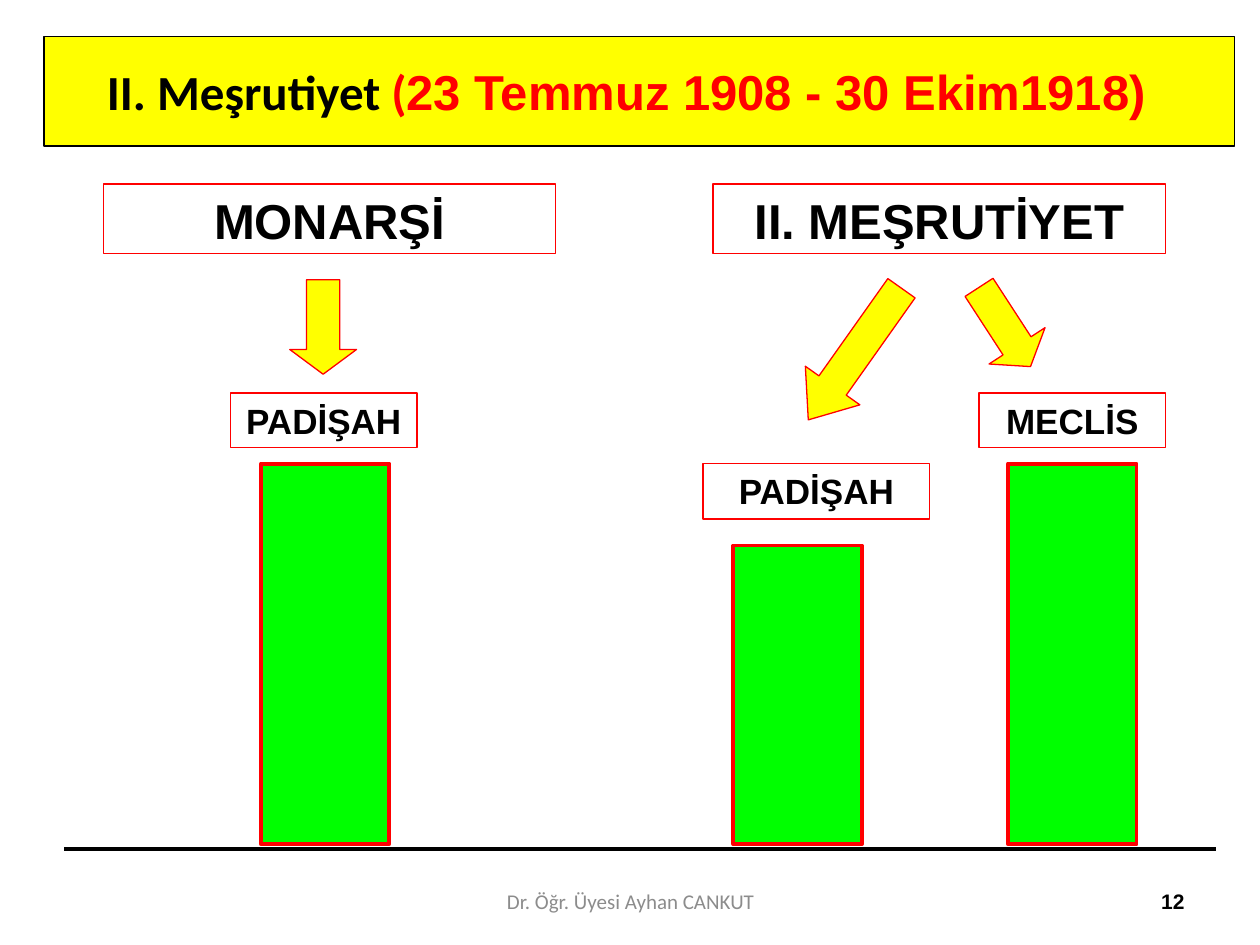
from dataclasses import dataclass

from lxml import etree
from pptx import Presentation
from pptx import util as u
from pptx.dml.color import RGBColor
from pptx.enum import shapes, text
from pptx.oxml.ns import qn

COLUMNS, ROWS = 100, 75
RED, YELLOW, GREEN, BLACK, GREY = "FF0000", "FFFF00", "00FF00", "000000", "8C8C8C"
BASE_ROW, BAR_WIDTH, ARROW_WIDTH = 67, 10.2, 5.3

deck = Presentation()
deck.slide_width, deck.slide_height = u.Inches(10), u.Inches(7.5)
page = deck.slides.add_slide(deck.slide_layouts[5])


@dataclass
class Area:
    left: float
    top: float
    width: float
    height: float

    def lengths(self) -> tuple:
        return (across(self.left), down(self.top), across(self.width), down(self.height))


@dataclass
class Label:
    words: str
    area: Area
    size: int


@dataclass
class Bar:
    left: float
    top: float


@dataclass
class Arrow:
    left: float
    top: float
    height: float
    rotation: float
    head: float


def across(columns: float) -> int:
    return round(deck.slide_width * columns / COLUMNS)


def down(rows: float) -> int:
    return round(deck.slide_height * rows / ROWS)


def color(value: str) -> RGBColor:
    return RGBColor.from_string(value)


def paint(shape, line: str, weight: float, fill: str = "") -> None:
    if fill:
        shape.fill.solid()
        shape.fill.fore_color.rgb = color(fill)
    else:
        shape.fill.background()
    shape.line.color.rgb = color(line)
    shape.line.width = u.Pt(weight)


def write(para, words: str, *, size: float, font: str = "Arial", ink: str = BLACK,
          bold: bool = True, align=text.PP_ALIGN.CENTER) -> None:
    para.alignment = align
    span = para.add_run()
    span.text = words
    span.font.name, span.font.size, span.font.bold = font, u.Pt(size), bold
    span.font.color.rgb = color(ink)


def add_shape(kind, area: Area, line: str, weight: float, fill: str = ""):
    shape = page.shapes.add_shape(kind, *area.lengths())
    shape.shadow.inherit = False
    paint(shape, line, weight, fill)
    return shape


def add_label(label: Label) -> None:
    box = add_shape(shapes.MSO_SHAPE.RECTANGLE, label.area, RED, 0.75)
    box.text_frame.vertical_anchor = text.MSO_ANCHOR.TOP
    write(box.text_frame.paragraphs[0], label.words, size=label.size)


def add_bar(bar: Bar) -> None:
    area = Area(bar.left, bar.top, BAR_WIDTH, BASE_ROW - bar.top)
    add_shape(shapes.MSO_SHAPE.RECTANGLE, area, RED, 2.25, GREEN)


def add_arrow(arrow: Arrow) -> None:
    area = Area(arrow.left, arrow.top, ARROW_WIDTH, arrow.height)
    shape = add_shape(shapes.MSO_SHAPE.DOWN_ARROW, area, RED, 0.75, YELLOW)
    shape.adjustments[0], shape.adjustments[1] = 0.5, arrow.head
    shape.rotation = arrow.rotation


def add_note(words: str, area: Area, **style) -> None:
    box = page.shapes.add_textbox(*area.lengths())
    box.text_frame.word_wrap = True
    box.text_frame.vertical_anchor = text.MSO_ANCHOR.MIDDLE
    write(box.text_frame.paragraphs[0], words, size=12, **style)


def add_ground_line() -> None:
    line = page.shapes.add_connector(shapes.MSO_CONNECTOR.STRAIGHT, across(5.1), down(67.4),
                                     across(96.5), down(67.4))
    line.line.color.rgb = color(BLACK)
    line.line.width = u.Pt(2.25)
    etree.SubElement(line._element.spPr, qn("a:effectLst"))


def format_title() -> None:
    title = page.shapes.title
    title.left, title.top, title.width, title.height = Area(3.5, 2.9, 94.5, 8.7).lengths()
    outline = etree.SubElement(title._element.spPr, qn("a:prstGeom"), prst="roundRect")
    etree.SubElement(outline, qn("a:avLst"))
    paint(title, BLACK, 0.75, YELLOW)
    frame = title.text_frame
    frame.word_wrap = True
    frame.auto_size = text.MSO_AUTO_SIZE.NONE
    frame.vertical_anchor = text.MSO_ANCHOR.MIDDLE
    frame.margin_right = across(3.1)
    para = frame.paragraphs[0]
    write(para, "II. Meşrutiyet ", size=28, font="Calibri")
    write(para, "(", size=28, font="Calibri", ink=RED)
    write(para, "23 Temmuz 1908 - 30 Ekim1918)", size=28, ink=RED)


LABELS = [
    Label("MONARŞİ", Area(8.2, 14.6, 35.9, 5.5), 28),
    Label("II. MEŞRUTİYET", Area(56.6, 14.6, 35.9, 5.5), 28),
    Label("PADİŞAH", Area(18.3, 31.2, 14.8, 4.3), 20),
    Label("PADİŞAH", Area(55.8, 36.8, 18, 4.4), 20),
    Label("MECLİS", Area(77.7, 31.2, 14.8, 4.3), 20),
]
BARS = [Bar(20.7, 36.8), Bar(58.2, 43.3), Bar(80, 36.8)]
ARROWS = [
    Arrow(23, 22.2, 7.5, 0, 0.37),
    Arrow(65.2, 21.7, 12.8, 35.3, 0.63),
    Arrow(77.1, 22.2, 7.5, 327, 0.37),
]

format_title()
for bar in BARS:
    add_bar(bar)
for label in LABELS:
    add_label(label)
for arrow in ARROWS:
    add_arrow(arrow)
add_ground_line()
add_note("Dr. Öğr. Üyesi Ayhan CANKUT", Area(34.2, 69.5, 31.7, 4),
         font="Calibri", ink=GREY, bold=False)
add_note("12", Area(71.7, 69.5, 23.3, 4), align=text.PP_ALIGN.RIGHT)
deck.save("out.pptx")
